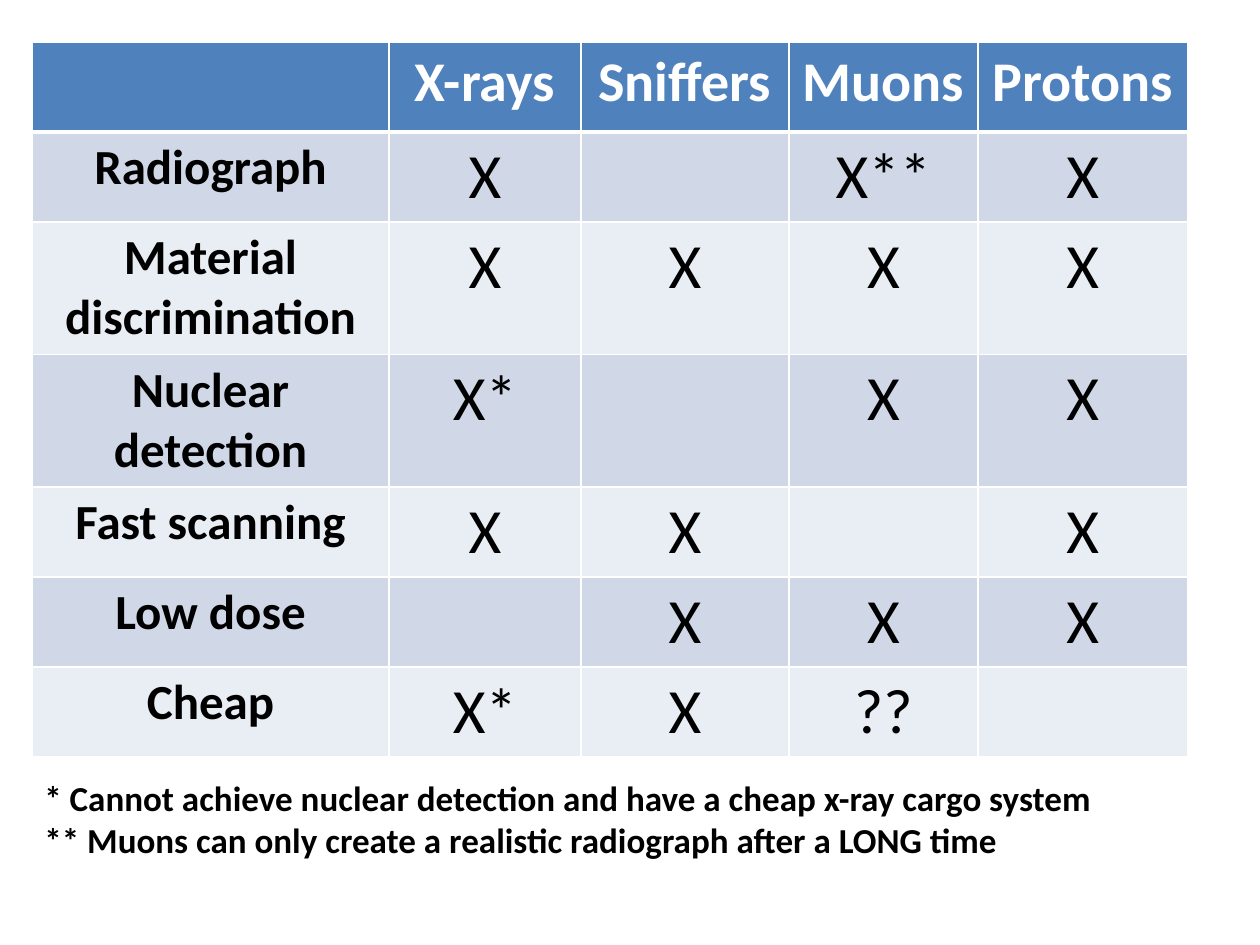
from lxml import etree
from pptx import Presentation
from pptx.dml.color import RGBColor
from pptx.enum.text import MSO_AUTO_SIZE, PP_ALIGN
from pptx.oxml.ns import qn
from pptx.util import Pt

PX = 914400 // 126
CENTER, LEFT = PP_ALIGN.CENTER, PP_ALIGN.LEFT
FIT_SHAPE = MSO_AUTO_SIZE.SHAPE_TO_FIT_TEXT
COLORS = {
    "header": "4F81BD",
    "odd": "D0D8E8",
    "even": "E9EDF4",
    "white": "FFFFFF",
    "black": "000000",
}

METHODS = ["", "X-rays", "Sniffers", "Muons", "Protons"]
CAPABILITIES = [
    ["Radiograph", "X", "", "X**", "X"],
    ["Material discrimination", "X", "X", "X", "X"],
    ["Nuclear detection", "X*", "", "X", "X"],
    ["Fast scanning", "X", "X", "", "X"],
    ["Low dose", "", "X", "X", "X"],
    ["Cheap", "X*", "X", "??", ""],
]
FOOTNOTES = [
    "* Cannot achieve nuclear detection and have a cheap x-ray cargo system",
    "** Muons can only create a realistic radiograph after a LONG time",
]
COLUMN_WIDTHS = [357, 192, 208, 189, 210]
ROW_HEIGHT = 90
TABLE_HEIGHT = 711


class SlideBuilder:
    font = "Calibri"

    def __init__(self, slide):
        self.slide = slide

    def add_run(self, paragraph, text, size, color, bold, alignment):
        paragraph.alignment = alignment
        run = paragraph.add_run()
        run.text = text
        run.font.name = self.font
        run.font.size = Pt(size)
        run.font.bold = bold
        run.font.color.rgb = RGBColor.from_string(COLORS[color])

    def border(self, cell, side, width):
        properties = cell._tc.get_or_add_tcPr()
        line = etree.SubElement(properties, qn(f"a:ln{side}"), w=str(Pt(width)))
        fill = etree.SubElement(line, qn("a:solidFill"))
        etree.SubElement(fill, qn("a:srgbClr"), val=COLORS["white"])

    def cell(self, cell, text, row, column):
        """Style one cell by its place: header row, label column or mark."""
        heavy_side = {0: "B", 1: "T"}.get(row)
        for side in "LRTB":
            self.border(cell, side, 3 if side == heavy_side else 1)
        if row == 0:
            fill, size, color, bold = "header", 32, "white", True
        else:
            fill = "odd" if row % 2 else "even"
            size, color, bold = (36, "black", False) if column else (28, "black", True)
        cell.fill.solid()
        cell.fill.fore_color.rgb = RGBColor.from_string(COLORS[fill])
        paragraph = cell.text_frame.paragraphs[0]
        paragraph.font.size = Pt(size)
        if text:
            self.add_run(paragraph, text, size, color, bold, CENTER)

    def table(self, left, top, widths, row_height, height, rows):
        """Rows with two-line labels grow until the table has the full height."""
        frame = self.slide.shapes.add_table(
            len(rows), len(widths), left * PX, top * PX, sum(widths) * PX, height * PX
        )
        table = frame.table
        for column, width in zip(table.columns, widths):
            column.width = width * PX
        for row_index, texts in enumerate(rows):
            table.rows[row_index].height = row_height * PX
            for column_index, text in enumerate(texts):
                cell = table.cell(row_index, column_index)
                self.cell(cell, text, row_index, column_index)
        frame.height = height * PX

    def text(self, left, top, width, height, lines, size):
        box = self.slide.shapes.add_textbox(left * PX, top * PX, width * PX, height * PX)
        text_frame = box.text_frame
        text_frame.word_wrap = False
        text_frame.auto_size = FIT_SHAPE
        for index, line in enumerate(lines):
            paragraph = text_frame.add_paragraph() if index else text_frame.paragraphs[0]
            self.add_run(paragraph, line, size, "black", True, LEFT)


def main():
    presentation = Presentation()
    presentation.slide_width = 1260 * PX
    presentation.slide_height = 945 * PX
    slide = presentation.slides.add_slide(presentation.slide_layouts[6])
    builder = SlideBuilder(slide)
    builder.table(32, 42, COLUMN_WIDTHS, ROW_HEIGHT, TABLE_HEIGHT, [METHODS, *CAPABILITIES])
    builder.text(32, 770, 1075, 97, FOOTNOTES, 20)
    presentation.save("out.pptx")


if __name__ == "__main__":
    main()
